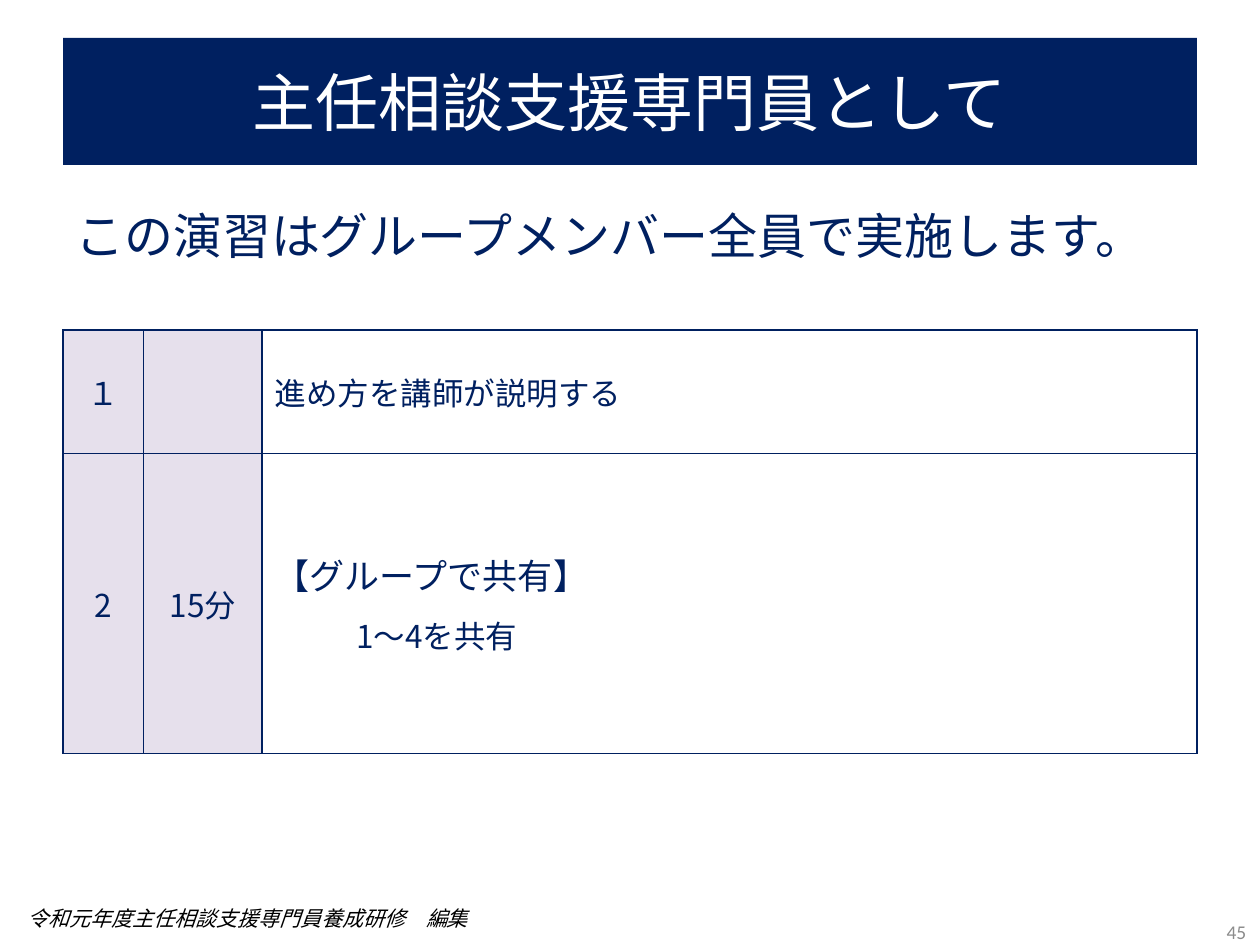
from lxml import etree
from pptx import Presentation
from pptx.dml.color import RGBColor
from pptx.enum.text import MSO_ANCHOR, MSO_AUTO_SIZE, PP_ALIGN
from pptx.oxml.ns import qn
from pptx.util import Inches, Pt

LEFT, CENTER, RIGHT = PP_ALIGN.LEFT, PP_ALIGN.CENTER, PP_ALIGN.RIGHT
TOP, MIDDLE = MSO_ANCHOR.TOP, MSO_ANCHOR.MIDDLE
TITLE_ONLY = 5

NAVY = RGBColor(0x00, 0x20, 0x60)
LAVENDER = RGBColor(0xE6, 0xE0, 0xEC)
WHITE = RGBColor(0xFF, 0xFF, 0xFF)
BLACK = RGBColor(0x00, 0x00, 0x00)
GRAY = RGBColor(0x8C, 0x8C, 0x8C)
JAPANESE, LATIN = "Noto Sans CJK JP", "Calibri"

# Content
TITLE = "主任相談支援専門員として"
LEAD = "この演習はグループメンバー全員で実施します。"
FOOTER = "令和元年度主任相談支援専門員養成研修　編集"
PAGE_NUMBER = "45"
# Each cell is a list of (text, size, left indent in inches, space before in points)
STEPS = [
    [[("１", 18, 0, 0)], [], [("進め方を講師が説明する", 18, 0, 0)]],
    [[("2", 18, 0, 0)], [("15分", 18, 0, 0)],
     [("【グループで共有】", 20, 0, 0), ("1～4を共有", 18, 0.65, 7)]],
]

# Layout, in inches
MARGIN, WIDTH = 0.5, 9
COLUMNS = [0.64, 0.94, 7.42]
ROWS = [0.98, 2.38]


def add_text(para, text, size, color, font=JAPANESE, align=LEFT, italic=None):
    para.alignment = align
    span = para.add_run()
    span.text = text
    span.font.size = Pt(size)
    span.font.name = font
    span.font.italic = italic
    span.font.color.rgb = color
    east_asian = etree.SubElement(span.font._element, qn("a:ea"))
    east_asian.set("typeface", font)


def add_box(page, place, text, size, color, anchor=TOP, **style):
    box = page.shapes.add_textbox(*map(Inches, place))
    frame = box.text_frame
    frame.word_wrap = True
    frame.vertical_anchor = anchor
    add_text(frame.paragraphs[0], text, size, color, **style)


def add_borders(cell):
    properties = cell._tc.get_or_add_tcPr()
    for index, side in enumerate(("lnL", "lnR", "lnT", "lnB")):
        line = etree.Element(qn(f"a:{side}"), w=str(Pt(1)))
        fill = etree.SubElement(line, qn("a:solidFill"))
        etree.SubElement(fill, qn("a:srgbClr"), val=str(NAVY))
        properties.insert(index, line)


def fill_cell(cell, lines, is_label):
    cell.vertical_anchor = MIDDLE
    cell.fill.solid()
    cell.fill.fore_color.rgb = LAVENDER if is_label else WHITE
    add_borders(cell)
    frame = cell.text_frame
    for index, (text, size, indent, gap) in enumerate(lines):
        para = frame.add_paragraph() if index else frame.paragraphs[0]
        para.space_before = Pt(gap)
        add_text(para, text, size, NAVY, align=CENTER if is_label else LEFT)
        if indent:
            para._p.get_or_add_pPr().set("marL", str(Inches(indent)))


def add_steps(page):
    frame = page.shapes.add_table(
        len(ROWS), len(COLUMNS), Inches(MARGIN), Inches(2.62),
        Inches(sum(COLUMNS)), Inches(sum(ROWS)))
    table = frame.table
    table.first_row = table.horz_banding = False
    for column, width in zip(table.columns, COLUMNS):
        column.width = Inches(width)
    for row, height, step in zip(table.rows, ROWS, STEPS):
        row.height = Inches(height)
        for index, lines in enumerate(step):
            fill_cell(row.cells[index], lines, is_label=index < 2)


def main():
    deck = Presentation()
    deck.slide_width, deck.slide_height = Inches(10), Inches(7.5)
    page = deck.slides.add_slide(deck.slide_layouts[TITLE_ONLY])

    # Title band
    title = page.shapes.title
    title.left, title.top = Inches(MARGIN), Inches(0.3)
    title.width, title.height = Inches(WIDTH), Inches(1.01)
    title.fill.solid()
    title.fill.fore_color.rgb = NAVY
    title.text_frame.auto_size = MSO_AUTO_SIZE.NONE
    title.text_frame.vertical_anchor = MIDDLE
    add_text(title.text_frame.paragraphs[0], TITLE, 36, WHITE, align=CENTER)

    # Footer, step table, lead sentence and page number
    add_box(page, (0.12, 7.14, 3.94, 0.3), FOOTER, 12, BLACK, italic=True)
    add_steps(page)
    add_box(page, (MARGIN, 1.58, WIDTH, 0.57), LEAD, 28, NAVY)
    add_box(page, (7.66, 7.29, 2.33, 0.21), PAGE_NUMBER, 11.1, GRAY,
            anchor=MIDDLE, font=LATIN, align=RIGHT)

    deck.save("out.pptx")


if __name__ == "__main__":
    main()
